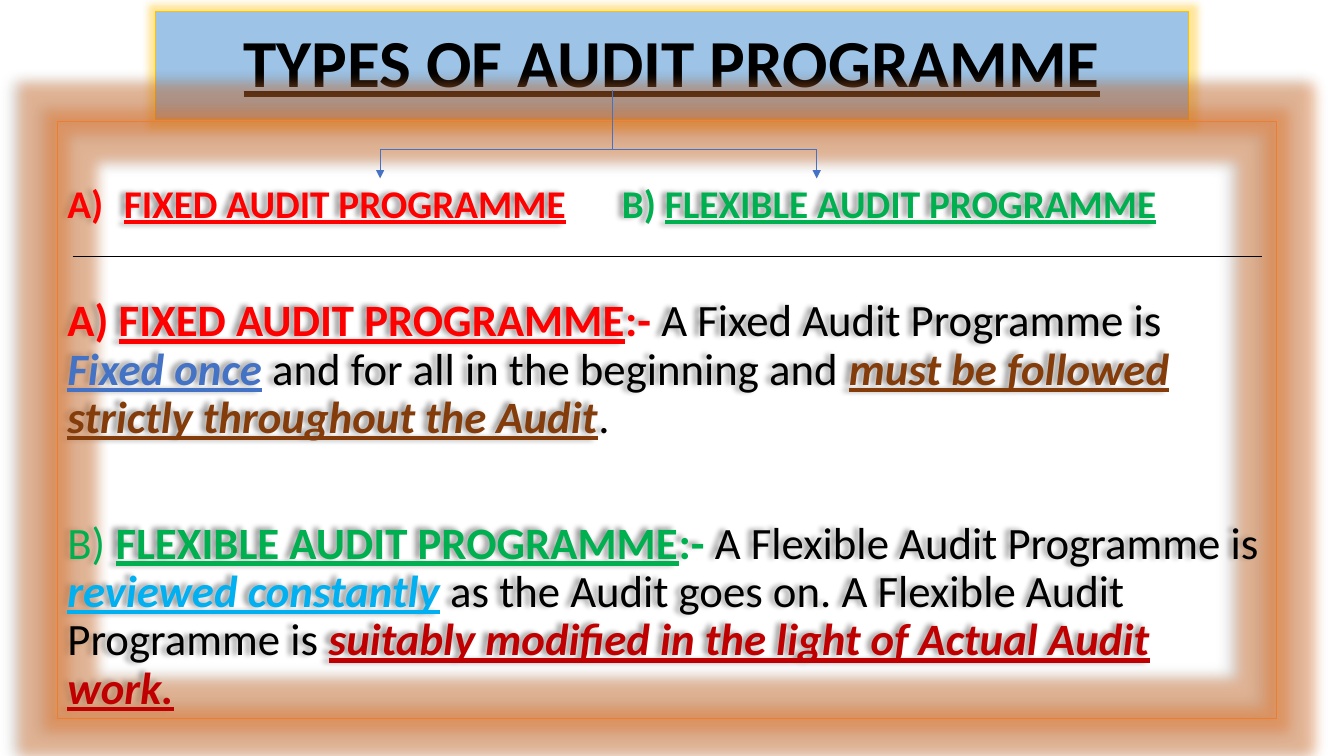
from lxml.etree import SubElement
from pptx import Presentation
from pptx.dml.color import RGBColor
from pptx.enum.shapes import MSO_CONNECTOR as Connector, MSO_SHAPE as Shape
from pptx.enum.text import MSO_ANCHOR as Anchor, MSO_AUTO_SIZE as AutoSize, PP_ALIGN as Align
from pptx.oxml.ns import qn
from pptx.util import Emu, Inches, Pt

COLORS = {
    "black": "000000", "sky": "9DC3E6", "gold": "FFC000", "orange": "ED7D31",
    "red": "FF0000", "green": "00B050", "blue": "4472C4", "brown": "843C0B",
    "cyan": "00B0F0", "crimson": "C00000",
}
FONT = "Calibri"
TITLE_BOX = (1.54, 0.11, 10.25, 1.08)
BODY_BOX = (0.57, 1.21, 12.09, 5.92)
HANGING = 0.56

# Each run: text, colour, style letters (b bold, i italic, u underline)
HEADINGS = [
    ("FIXED AUDIT PROGRAMME", "red", "bu"), ("\t\t", "black", ""),
    ("B) ", "green", "b"), ("FLEXIBLE AUDIT PROGRAMME", "green", "bu"),
]
FIXED = [
    ("A) ", "red", "b"), ("FIXED AUDIT PROGRAMME", "red", "bu"), (":- ", "red", "b"),
    ("A Fixed Audit Programme is ", "black", ""), ("Fixed once", "blue", "biu"),
    (" and for all in the beginning and ", "black", ""),
    ("must be followed strictly throughout the Audit", "brown", "biu"), (".", "black", ""),
]
FLEXIBLE = [
    ("B) ", "green", ""), ("FLEXIBLE AUDIT PROGRAMME", "green", "bu"), (":- ", "green", "b"),
    ("A Flexible Audit Programme is ", "black", ""), ("reviewed constantly", "cyan", "biu"),
    (" as the Audit goes on. A Flexible Audit Programme is ", "black", ""),
    ("suitably modified in the light of Actual Audit work.", "crimson", "biu"),
]


def rgb(name):
    return RGBColor.from_string(COLORS[name])


def add_effect(panel, tag, color, alpha, **settings):
    effects = panel._element.spPr.find(qn("a:effectLst"))
    effect = SubElement(effects, qn(tag), {key: str(value) for key, value in settings.items()})
    tint = SubElement(effect, qn("a:srgbClr"), val=COLORS[color])
    SubElement(tint, qn("a:alpha"), val=str(alpha * 1000))


def outline_with_glow(panel, color, radius):
    panel.line.color.rgb = rgb(color)
    panel.line.width = Pt(0.75)
    panel.shadow.inherit = False
    add_effect(panel, "a:glow", color, 40, rad=Pt(radius))


def write_runs(paragraph, runs, size):
    paragraph.line_spacing = 0.9
    for text, color, style in runs:
        run = paragraph.add_run()
        run.text = text
        font = run.font
        font.name, font.size = FONT, Pt(size)
        font.color.rgb = rgb(color)
        font.bold, font.italic, font.underline = (letter in style for letter in "biu")


def number_with_letter(paragraph, indent):
    props = paragraph._p.get_or_add_pPr()
    props.set("marL", str(Inches(indent)))
    props.set("indent", str(-Inches(indent)))
    SubElement(props, qn("a:buFont"), typeface="+mj-lt")
    SubElement(props, qn("a:buAutoNum"), type="alphaUcParenR")


def add_title(slide, box):
    title = slide.shapes.title
    title.left, title.top, title.width, title.height = map(Inches, box)
    title.fill.solid()
    title.fill.fore_color.rgb = rgb("sky")
    outline_with_glow(title, "gold", 11)
    frame = title.text_frame
    frame.auto_size = AutoSize.NONE
    frame.vertical_anchor = Anchor.MIDDLE
    heading = frame.paragraphs[0]
    heading.alignment = Align.CENTER
    write_runs(heading, [("TYPES OF AUDIT PROGRAMME", "black", "bu")], 48)


def add_body(slide, box):
    body = slide.shapes.add_shape(Shape.RECTANGLE, *map(Inches, box))
    body.fill.background()
    outline_with_glow(body, "orange", 18)
    add_effect(body, "a:outerShdw", "black", 40, blurRad=Pt(4), dist=Pt(3), dir=180 * 60000)
    frame = body.text_frame
    frame.word_wrap = True
    frame.vertical_anchor = Anchor.TOP
    frame.margin_top = Inches(0.62)
    for index, (runs, size, gap) in enumerate([(HEADINGS, 28, 0), (FIXED, 32, 51), (FLEXIBLE, 32, 55)]):
        paragraph = frame.add_paragraph() if index else frame.paragraphs[0]
        if index == 0:
            number_with_letter(paragraph, HANGING)
        paragraph.alignment = Align.LEFT
        paragraph.space_before = Pt(gap)
        write_runs(paragraph, runs, size)


def add_rule(slide, start, end, color, arrow=False):
    rule = slide.shapes.add_connector(Connector.STRAIGHT, *map(Inches, start + end))
    rule.line.color.rgb = rgb(color)
    rule.line.width = Pt(0.5)
    if arrow:
        SubElement(rule.line._get_or_add_ln(), qn("a:tailEnd"), type="triangle")
    SubElement(rule._element.spPr, qn("a:effectLst"))


def add_branches(slide, box):
    """Fork from the title to the two headings, with a divider below them."""
    left, top, width, _ = box
    stem, fork, tips = left + 5.5, top + 0.27, top + 0.56
    branches = (left + 3.2, left + 7.53)
    add_rule(slide, (stem, top - 0.32), (stem, fork), "blue")
    add_rule(slide, (branches[0], fork), (branches[1], fork), "blue")
    for branch in branches:
        add_rule(slide, (branch, fork), (branch, tips), "blue", arrow=True)
    divider = top + 1.33
    add_rule(slide, (left + 0.15, divider), (left + width - 0.14, divider), "black")


def main():
    deck = Presentation()
    deck.slide_width, deck.slide_height = Inches(13.33), Inches(7.5)
    slide = deck.slides.add_slide(deck.slide_layouts[5])
    add_title(slide, TITLE_BOX)
    add_body(slide, BODY_BOX)
    add_branches(slide, BODY_BOX)
    deck.save("out.pptx")


if __name__ == "__main__":
    main()
